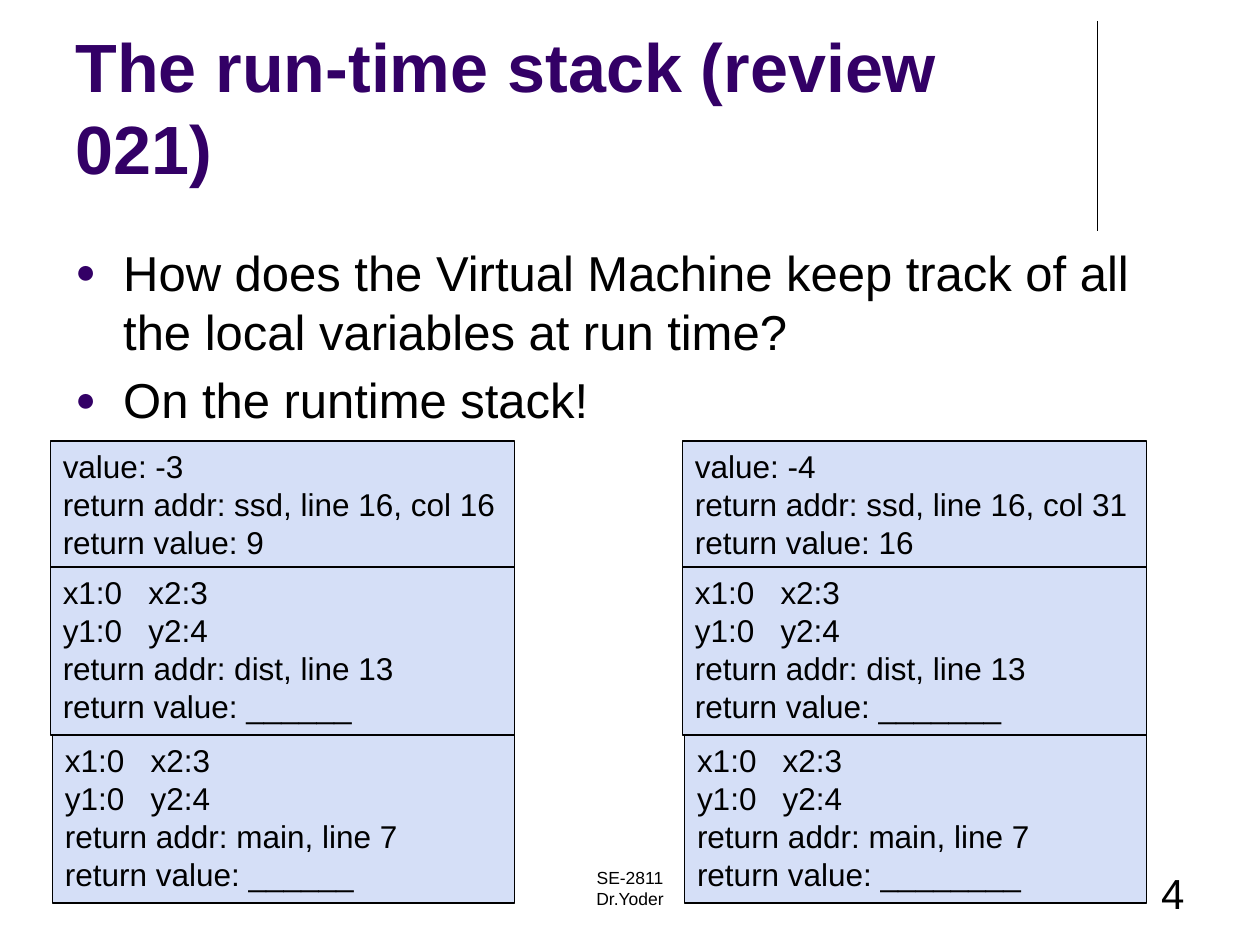
from lxml.etree import SubElement as Sub
from pptx import Presentation
from pptx.dml.color import RGBColor as Rgb
from pptx.enum.shapes import MSO_CONNECTOR as Conn, MSO_SHAPE as Shape
from pptx.enum.text import MSO_ANCHOR as Anchor, MSO_AUTO_SIZE as Auto, PP_ALIGN as Align
from pptx.oxml.ns import qn
from pptx.util import Inches, Pt

HUES = {"ink": "000000", "head": "330066", "fill": "D5DFF7"}
UNIT = Inches(1) / 12
PAGE = (0, 0, 120, 90)
LOCALS = ["x1:0\tx2:3", "y1:0\ty2:4"]


def hue(name):
    """Return a palette colour."""
    return Rgb.from_string(HUES[name])


def grid(*cells):
    """Turn grid units of a twelfth of an inch into lengths."""
    return [round(cell * UNIT) for cell in cells]


def put(item, vals):
    """Set each attribute in a dict of format values."""
    for key, val in vals.items():
        setattr(item, key, val)


def write(shape, lines, size, tone="ink", align=Align.LEFT, bold=False, anchor=Anchor.TOP):
    """Fill a shape with formatted paragraphs."""
    frame = shape.text_frame
    put(frame, {"word_wrap": True, "auto_size": Auto.NONE, "vertical_anchor": anchor})
    frame.text = "\n".join(lines)
    for para in frame.paragraphs:
        if "\t" in para.text:
            tabs = Sub(para._p.get_or_add_pPr(), qn("a:tabLst"))
            Sub(tabs, qn("a:tab"), pos=str(Inches(0.68)), algn="l")
        para.alignment = align
        for run in para.runs:
            put(run.font, {"name": "Arial", "size": Pt(size), "bold": bold})
            run.font.color.rgb = hue(tone)
    return frame


def head(slide, box):
    """Place the title and the rule at its right."""
    x, y, w, h = box
    title = slide.shapes.title
    put(title, dict(zip(("left", "top", "width", "height"), grid(x, y, w, h))))
    write(title, ["The run-time stack (review 021)"], 39, "head", bold=True, anchor=Anchor.BOTTOM)
    side = x + w - 0.5
    rule = slide.shapes.add_connector(Conn.STRAIGHT, *grid(side, y + 0.5, side, y + 20.5))
    put(rule.line, {"width": Pt(0.75)})
    rule.line.color.rgb = hue("ink")
    Sub(rule._element.spPr, qn("a:effectLst"))


def points(slide, box, lines):
    """Place the bulleted text."""
    frame = write(slide.shapes.add_textbox(*grid(*box)), lines, 28)
    for num, para in enumerate(frame.paragraphs):
        form = para._p.get_or_add_pPr()
        form.set("marL", str(Inches(0.38)))
        form.set("indent", str(-Inches(0.38)))
        Sub(Sub(form, qn("a:buClr")), qn("a:srgbClr"), val=HUES["head"])
        Sub(form, qn("a:buSzPct"), val="70000")
        Sub(form, qn("a:buFont"), typeface="Arial")
        Sub(form, qn("a:buChar"), char="●")
        if num:
            para.space_before = Pt(5.6)


def stack(slide, box, calls):
    """Pile the call frames from the bottom of the box upward."""
    x, y, w, h = box
    base = y + h
    for num, lines in enumerate(calls):
        tall = 4 * len(lines)
        base -= tall
        inset = 0 if num else 0.2
        rect = slide.shapes.add_shape(Shape.RECTANGLE, *grid(x + inset, base, w - inset, tall))
        rect.shadow.inherit = False
        rect.fill.solid()
        rect.fill.fore_color.rgb = hue("fill")
        rect.line.color.rgb = hue("ink")
        rect.line.width = Pt(0.75)
        frame = write(rect, lines, 18)
        frame.margin_right = 0


def calls(value, col, result, blanks):
    """List the text of one stack, oldest call first."""
    outer = [
        LOCALS + [f"return addr: {place}", "return value: " + "_" * blank]
        for place, blank in zip(("main, line 7", "dist, line 13"), blanks)
    ]
    inner = [f"value: {value}", f"return addr: ssd, line 16, col {col}", f"return value: {result}"]
    return outer + [inner]


def foot(slide, box):
    """Place the course name and the slide number."""
    x, y, w, h = box
    top = y + h - 8
    mid = slide.shapes.add_textbox(*grid(x + 41, top, 38, 6))
    write(mid, ["SE-2811", "Dr.Yoder"], 10, align=Align.CENTER)
    num = slide.shapes.add_textbox(*grid(x + 86, top, 28, 6))
    write(num, ["4"], 24, align=Align.RIGHT)


def main():
    """Build and save the slide."""
    deck = Presentation()
    deck.slide_width, deck.slide_height = grid(*PAGE[2:])
    slide = deck.slides.add_slide(deck.slide_layouts[5])
    head(slide, (6, 1.5, 99, 17))
    points(slide, (6, 22.5, 108, 58), [
        "How does the Virtual Machine keep track of all the local variables at run time?",
        "On the runtime stack!",
    ])
    foot(slide, PAGE)
    stack(slide, (4.8, 42, 44.2, 44), calls(-3, 16, 9, (6, 6)))
    stack(slide, (65, 42, 44.2, 44), calls(-4, 31, 16, (8, 7)))
    deck.save("out.pptx")


if __name__ == "__main__":
    main()
